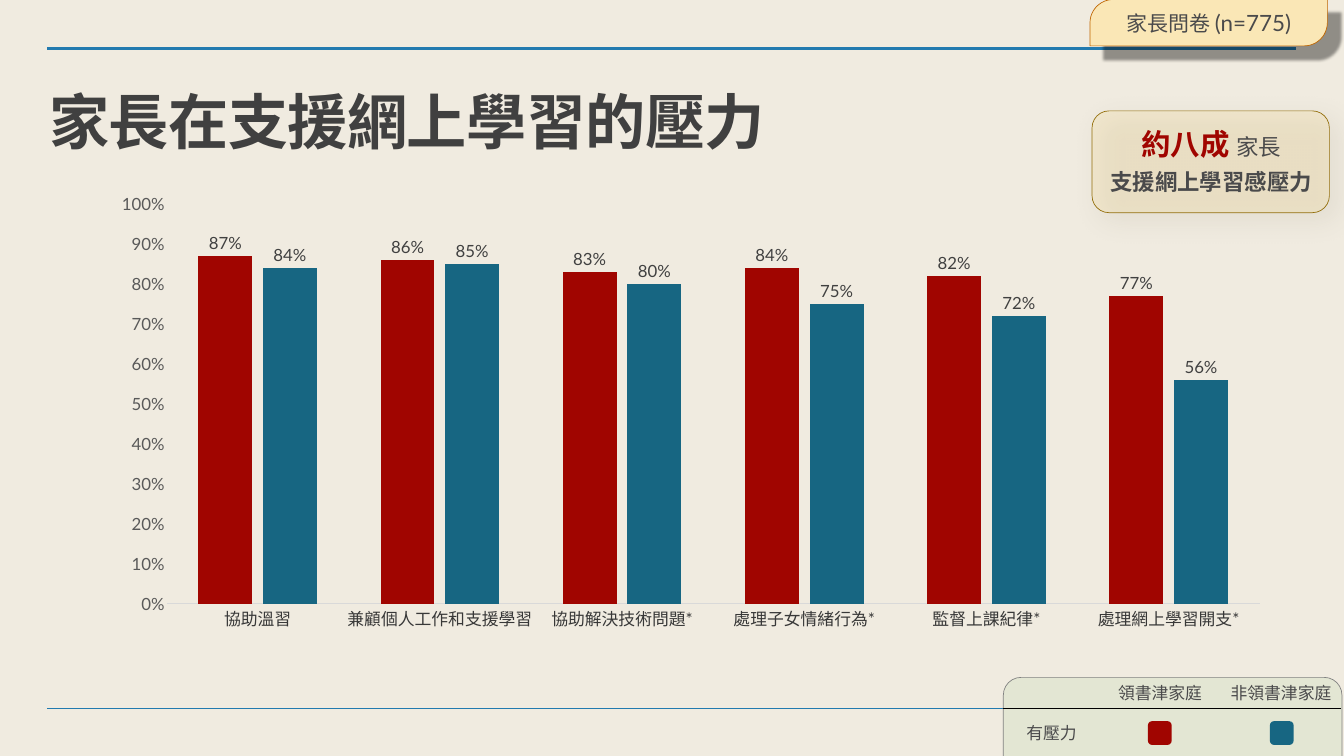
from lxml import etree
from pptx import Presentation
from pptx.chart.data import CategoryChartData as ChartData
from pptx.dml.color import RGBColor as RGB
from pptx.enum.chart import XL_CHART_TYPE as Kind, XL_LABEL_POSITION as Pos
from pptx.enum.chart import XL_TICK_MARK as Tick
from pptx.enum.shapes import MSO_CONNECTOR as Link, MSO_SHAPE as Shape
from pptx.enum.text import MSO_ANCHOR as Anchor, PP_ALIGN as Align
from pptx.oxml import parse_xml
from pptx.oxml.ns import nsdecls, qn
from pptx.util import Inches, Pt

COL = {
    "back": "F0EBE0", "rule": "227AAF", "title": "404040", "text": "4A4A4B",
    "red": "A00500", "blue": "176682", "axis": "595959", "cat": "383838",
    "base": "D9D9D9", "green": "BCD9AA", "gray": "808080", "gold": "F7DC92",
    "brown": "936E0A", "cream": "FAE7B6", "orange": "BF6500",
    "shade": "4E4226", "black": "000000",
}
PLAIN = "{2D5ABB26-0587-4C30-8999-92F81FD0307C}"  # no style, no grid
CATS = ["協助溫習", "兼顧個人工作和支援學習", "協助解決技術問題*",
        "處理子女情緒行為*", "監督上課紀律*", "處理網上學習開支*"]
SERIES = [("Series 1", "red", [0.87, 0.86, 0.83, 0.84, 0.82, 0.77]),
          ("Series 2", "blue", [0.84, 0.85, 0.8, 0.75, 0.72, 0.56])]


def rgb(name):
    return RGB.from_string(COL[name])


def box(at):
    return [Inches(v) for v in at]


def style(font, size, color, bold=False, face="Lato"):
    font.name, font.size, font.bold = face, Pt(size), bold
    font.color.rgb = rgb(color)


def add_rule(slide, y, width):
    line = slide.shapes.add_connector(
        Link.STRAIGHT, *box((0.94, y, 25.72, y)))
    line.line.color.rgb = rgb("rule")
    line.line.width = Pt(width)
    etree.SubElement(line._element.spPr, qn("a:effectLst"))


def add_block(slide, kind, at, fill, edge=None, adj=(), alpha=None):
    item = slide.shapes.add_shape(kind, *box(at))
    item.shadow.inherit = False
    item.fill.solid()
    item.fill.fore_color.rgb = rgb(fill)
    for i, value in enumerate(adj):
        item.adjustments[i] = value
    if edge:
        item.line.color.rgb = rgb(edge)
        item.line.width = Pt(1)
    else:
        item.line.fill.background()
    if alpha:
        tone = item._element.spPr.find(f"{qn('a:solidFill')}/{qn('a:srgbClr')}")
        etree.SubElement(tone, qn("a:alpha"), val=str(alpha * 1000))
    return item


def add_shadow(item, color, alpha, blur, dist):
    glow = item._element.spPr.find(qn("a:effectLst"))
    glow.append(parse_xml(
        f'<a:outerShdw {nsdecls("a")} blurRad="{Pt(blur)}" dist="{Pt(dist)}" '
        f'dir="2700000" algn="tl" rotWithShape="0"><a:srgbClr val="{COL[color]}">'
        f'<a:alpha val="{alpha * 1000}"/></a:srgbClr></a:outerShdw>'))


def add_frame(item, anchor, wrap=True):
    frame = item.text_frame
    frame.word_wrap, frame.vertical_anchor = wrap, anchor
    frame.margin_left = frame.margin_right = Inches(0.06)
    frame.margin_top = frame.margin_bottom = Inches(0.06)
    return frame


def add_runs(para, *runs):
    para.alignment = Align.CENTER
    for text, *look in runs:
        run = para.add_run()
        run.text = text
        style(run.font, *look)


def add_title(slide):
    item = slide.shapes.add_textbox(*box((0.92, 1.9, 22.89, 3.53)))
    para = add_frame(item, Anchor.TOP).paragraphs[0]
    para.line_spacing = 0.8
    run = para.add_run()
    run.text = "家長在支援網上學習的壓力"
    style(run.font, 86, "title", True, "Arial")
    run._r.get_or_add_rPr().set("spc", "-90")


def add_bars(slide):
    data = ChartData(number_format="0%")
    data.categories = CATS
    for name, _, vals in SERIES:
        data.add_series(name, vals)
    chart = slide.shapes.add_chart(
        Kind.COLUMN_CLUSTERED, *box((1.89, 3.68, 23.58, 9.02)), data).chart
    chart.has_legend = chart.has_title = False
    style(chart.font, 24, "black")

    # Axes
    cat, val = chart.category_axis, chart.value_axis
    for axis, color in ((cat, "cat"), (val, "axis")):
        axis.major_tick_mark = axis.minor_tick_mark = Tick.NONE
        axis.has_major_gridlines = False
        style(axis.tick_labels.font, 24, color)
    cat.format.line.color.rgb = rgb("base")
    cat.format.line.width = Pt(0.75)
    val.format.line.fill.background()
    val.minimum_scale, val.maximum_scale, val.major_unit = 0, 1, 0.1
    val.tick_labels.number_format = "0%"
    val.tick_labels.number_format_is_linked = False

    # Columns and their labels
    plot = chart.plots[0]
    plot.gap_width, plot.overlap, plot.vary_by_categories = 118, -20, False
    for bars, (_, color, _) in zip(plot.series, SERIES):
        bars.format.fill.solid()
        bars.format.fill.fore_color.rgb = rgb(color)
        labels = bars.data_labels
        labels.show_value, labels.position = True, Pos.OUTSIDE_END
        labels.number_format, labels.number_format_is_linked = "0%", False
        style(labels.font, 24, "title")

    # Fixed plot area
    area = chart._chartSpace.chart.plotArea
    for old in area.findall(qn("c:layout")):
        area.remove(old)
    sizes = "".join(f'<c:{k} val="{v}"/>' for k, v in
                    (("x", 0.06), ("y", 0.04), ("w", 0.92), ("h", 0.88)))
    area.insert(0, parse_xml(
        f'<c:layout {nsdecls("c")}><c:manualLayout><c:layoutTarget val="inner"/>'
        f'<c:xMode val="edge"/><c:yMode val="edge"/>{sizes}'
        f'</c:manualLayout></c:layout>'))


def add_card(slide):
    card = add_block(slide, Shape.ROUNDED_RECTANGLE, (21.67, 2.2, 4.71, 2.02),
                     "gold", "brown", alpha=23)
    add_shadow(card, "shade", 30, 37, 16)
    item = slide.shapes.add_textbox(*box((21.95, 2.37, 4.17, 1.64)))
    frame = add_frame(item, Anchor.MIDDLE, False)
    top, low = frame.paragraphs[0], frame.add_paragraph()
    top.space_before = low.space_before = Pt(10)
    add_runs(top, ("約八成 ", 42, "red", True), ("家長", 32, "text"))
    add_runs(low, ("支援網上學習感壓力", 32, "text", True))


def add_key(slide):
    item = slide.shapes.add_table(2, 3, *box((19.91, 13.44, 6.71, 1.55)))
    table = item.table
    table.first_row = table.horz_banding = False
    next(item._element.iter(qn("a:tableStyleId"))).text = PLAIN
    for col, width in zip(table.columns, (1.91, 2.4, 2.4)):
        col.width = Inches(width)
    for row, height in zip(table.rows, (0.62, 0.93)):
        row.height = Inches(height)
    words = [["", "領書津家庭", "非領書津家庭"], ["有壓力", "", ""]]
    for r, (line, edge) in enumerate(zip(words, ("lnB", "lnT"))):
        for c, text in enumerate(line):
            cell = table.cell(r, c)
            cell.fill.background()
            cell._tc.get_or_add_tcPr().insert(0, parse_xml(
                f'<a:{edge} {nsdecls("a")} w="{Pt(1)}"><a:solidFill>'
                f'<a:srgbClr val="{COL["black"]}"/></a:solidFill></a:{edge}>'))
            if text:
                add_runs(cell.text_frame.paragraphs[0], (text, 24, "text"))
    table.cell(1, 0).vertical_anchor = Anchor.MIDDLE
    for x, color in ((22.78, "red"), (25.2, "blue")):
        add_block(slide, Shape.ROUNDED_RECTANGLE, (x, 14.31, 0.47, 0.47), color)


def add_tag(slide):
    tag = add_block(slide, Shape.ROUND_2_DIAG_RECTANGLE,
                    (21.63, -0.01, 4.71, 0.92), "cream", "orange", (0.5, 0))
    add_shadow(tag, "black", 40, 4, 27)
    add_runs(add_frame(tag, Anchor.MIDDLE).paragraphs[0],
             ("家長問卷 ", 30, "text"), ("(n=775)", 32, "text"))


def main():
    deck = Presentation()
    deck.slide_width, deck.slide_height = Inches(26.67), Inches(15)
    slide = deck.slides.add_slide(deck.slide_layouts[6])
    slide.background.fill.solid()
    slide.background.fill.fore_color.rgb = rgb("back")

    # Header and footer rules
    add_rule(slide, 0.97, 4)
    add_rule(slide, 14.06, 1)

    # Legend panel
    add_block(slide, Shape.ROUND_2_SAME_RECTANGLE, (19.91, 13.44, 6.72, 1.6),
              "green", "gray", (0.22, 0), 23)

    # Content
    add_title(slide)
    add_bars(slide)
    add_card(slide)
    add_key(slide)
    add_tag(slide)
    deck.save("out.pptx")


if __name__ == "__main__":
    main()
